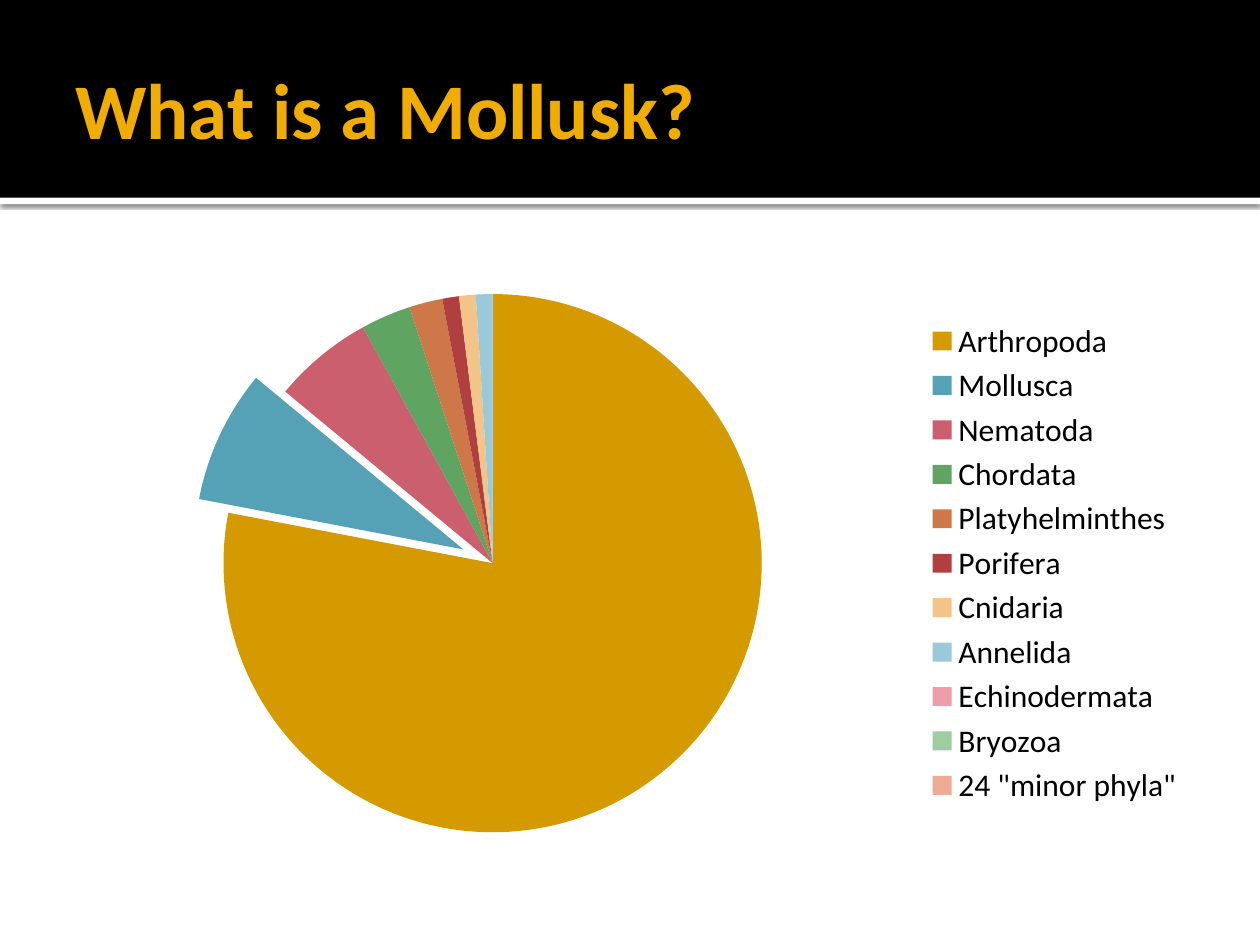
from pptx import Presentation
from pptx.chart.data import CategoryChartData
from pptx.dml.color import RGBColor
from pptx.enum.chart import XL_CHART_TYPE, XL_LEGEND_POSITION
from pptx.enum.shapes import MSO_SHAPE
from pptx.enum.text import MSO_ANCHOR
from pptx.oxml import parse_xml
from pptx.oxml.ns import nsdecls, qn
from pptx.util import Inches, Pt

PIE = XL_CHART_TYPE.PIE
RIGHT = XL_LEGEND_POSITION.RIGHT
RECT = MSO_SHAPE.RECTANGLE
MIDDLE = MSO_ANCHOR.MIDDLE

THEME = {
    "font": "Calibri", "title_size": Pt(45), "legend_size": Pt(18),
    "title": "F0AD00", "header": "000000", "rule": "FFFFFF", "text": "000000",
}

# Phylum, share of species in whole percent, slice colour
PHYLA = [
    ("Arthropoda", 78, "D49A00"),
    ("Mollusca", 8, "55A1B6"),
    ("Nematoda", 6, "CC5F6E"),
    ("Chordata", 3, "5FA461"),
    ("Platyhelminthes", 2, "CE7748"),
    ("Porifera", 1, "B03F40"),
    ("Cnidaria", 1, "F3C488"),
    ("Annelida", 1, "9ACAD9"),
    ("Echinodermata", 0, "EE9EA8"),
    ("Bryozoa", 0, "9ECD9F"),
    ('24 "minor phyla"', 0, "EFAC94"),
]
HIGHLIGHT, EXPLOSION = 1, 12

prs = Presentation()
prs.slide_width, prs.slide_height = Inches(10), Inches(7.5)
W, H = prs.slide_width, prs.slide_height
MARGIN = int(W * 0.05)
HEADER_H = Inches(1.57)
s = prs.slides.add_slide(prs.slide_layouts[6])

# Header band, with a thin shadowed rule below it
for top, height, color in ((HEADER_H, Inches(0.05), THEME["rule"]),
                           (0, HEADER_H, THEME["header"])):
    sp = s.shapes.add_shape(RECT, 0, top, W, height)
    sp.shadow.inherit = False
    sp.fill.solid()
    sp.fill.fore_color.rgb = RGBColor.from_string(color)
    sp.line.fill.background()
    if top:
        sp._element.spPr.find(qn("a:effectLst")).append(parse_xml(
            f'<a:outerShdw {nsdecls("a")} blurRad="{Pt(2.5)}" dist="{Pt(0.8)}" '
            'dir="5400000" algn="tl" rotWithShape="0"><a:srgbClr val="000000">'
            '<a:alpha val="60000"/></a:srgbClr></a:outerShdw>'))

# Title
sp = s.shapes.add_textbox(MARGIN, Inches(0.17), W - 2 * MARGIN, Inches(1.37))
tf = sp.text_frame
tf.word_wrap = True
tf.vertical_anchor = MIDDLE
tf.margin_left = Inches(0.1)
tf.margin_right = tf.margin_top = tf.margin_bottom = Inches(0.05)
r = tf.paragraphs[0].add_run()
r.text = "What is a Mollusk?"
r.font.name, r.font.size, r.font.bold = THEME["font"], THEME["title_size"], True
r.font.color.rgb = RGBColor.from_string(THEME["title"])

# Pie chart of the phyla
data = CategoryChartData()
data.categories = [name for name, _, _ in PHYLA]
data.add_series("Series 1", [share for _, share, _ in PHYLA])
chart_top = Inches(1.94)
chart = s.shapes.add_chart(PIE, MARGIN, chart_top, W - 2 * MARGIN,
                           H - MARGIN - chart_top, data).chart
chart.has_title = False
chart.font.name, chart.font.size = THEME["font"], THEME["legend_size"]
chart.font.color.rgb = RGBColor.from_string(THEME["text"])
chart.has_legend = True
chart.legend.position = RIGHT
chart.legend.include_in_layout = False

# Slice colours
plot = chart.plots[0]
plot.vary_by_categories = True
series = plot.series[0]
for i, (_, _, color) in enumerate(PHYLA):
    slice_format = series.points[i].format
    slice_format.fill.solid()
    slice_format.fill.fore_color.rgb = RGBColor.from_string(color)
    slice_format.line.fill.background()

# Pull the mollusc slice out
dpt = series._element.findall(qn("c:dPt"))[HIGHLIGHT]
dpt.find(qn("c:spPr")).addprevious(
    parse_xml(f'<c:explosion {nsdecls("c")} val="{EXPLOSION}"/>'))

prs.save("out.pptx")
